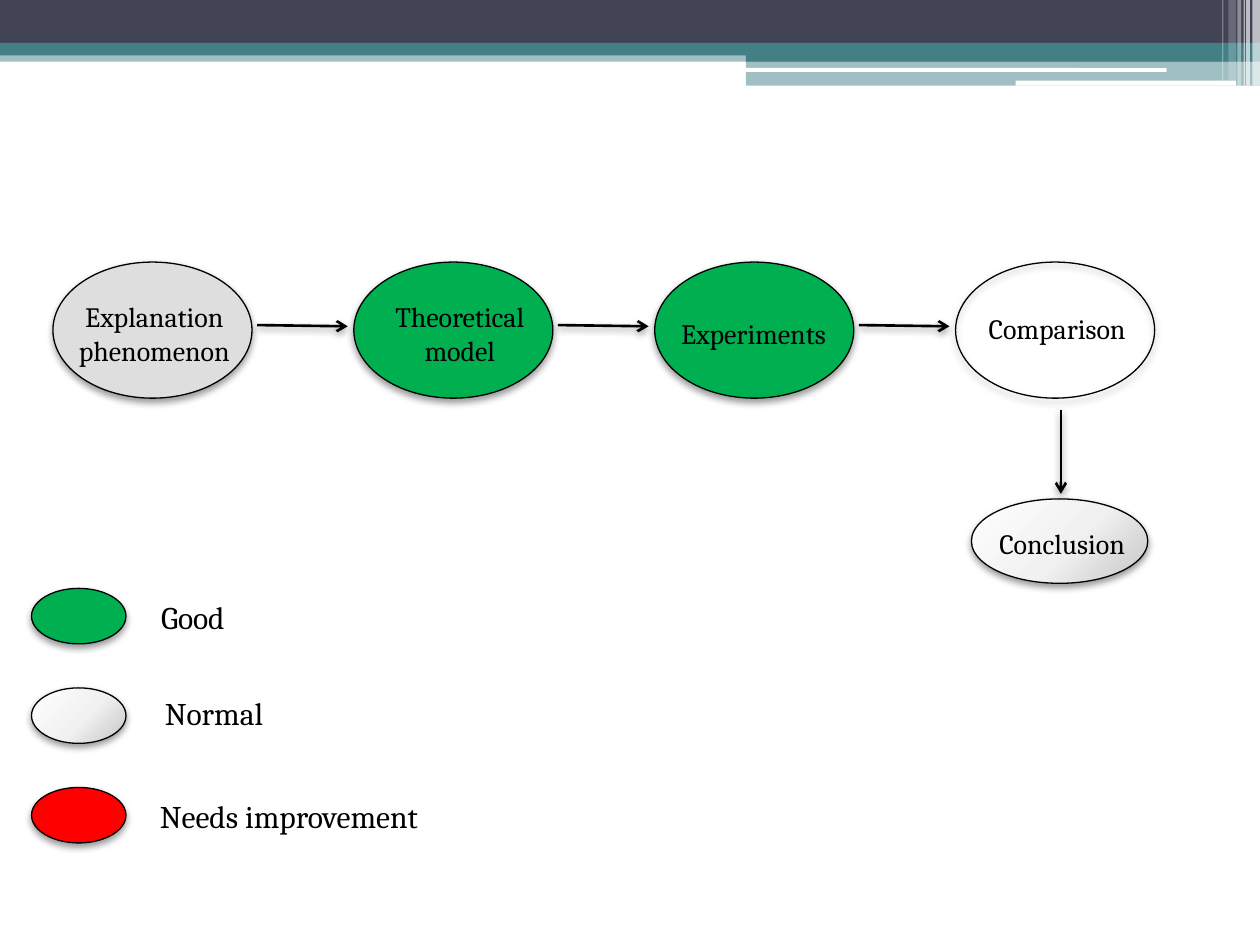
from typing import NamedTuple, Optional

from lxml import etree
from pptx import Presentation, util as u
from pptx.dml.color import RGBColor
from pptx.enum import shapes, text
from pptx.oxml import parse_xml
from pptx.oxml.ns import nsdecls, qn

COLS, ROWS = 100, 75
CELL = u.Inches(10) // COLS


class Theme(NamedTuple):
    font: str = "Cambria"
    node_size: int = 16
    legend_size: int = 18
    ink: str = "000000"
    paper: str = "FFFFFF"
    navy: str = "424456"
    teal: str = "438086"
    start: str = "DEDEDE"
    good: str = "00B050"
    poor: str = "FF0000"
    normal: tuple = ((0, "FEFEFE"), (55, "F1F1F1"), (100, "C5C5C5"))
    outline: float = 0.75
    arrow: float = 1.5


class Box(NamedTuple):
    """Left column, top row, columns wide and rows high."""
    col: float
    row: float
    cols: float
    rows: float


class Bar(NamedTuple):
    box: Box
    color: str
    opacity: int = 100
    rounded: bool = False


class Node(NamedTuple):
    label: str
    oval: Box
    label_box: Box
    fill: object
    size: int
    align: text.PP_ALIGN = text.PP_ALIGN.CENTER


T = Theme()


def grid(*cells: float) -> list:
    return [round(c * CELL) for c in cells]


def paint(s, color: str, opacity: int = 100) -> None:
    s.fill.solid()
    s.fill.fore_color.rgb = RGBColor.from_string(color)
    if opacity < 100:
        clr = s._element.spPr.find(f".//{qn('a:srgbClr')}")
        etree.SubElement(clr, qn("a:alpha"), val=str(opacity * 1000))


def paint_gradient(s, stops: tuple) -> None:
    """Fill with a circular gradient centred beyond the upper left."""
    gs = "".join(f'<a:gs pos="{pos * 1000}"><a:srgbClr val="{c}"/></a:gs>'
                 for pos, c in stops)
    s._element.spPr.append(parse_xml(
        f'<a:gradFill {nsdecls("a")} rotWithShape="1"><a:gsLst>{gs}</a:gsLst>'
        '<a:path path="circle"><a:fillToRect l="-40000" t="-90000" '
        'r="140000" b="190000"/></a:path></a:gradFill>'))


def add_shadow(s) -> None:
    spPr = s._element.spPr
    for old in spPr.findall(qn("a:effectLst")):
        spPr.remove(old)
    spPr.append(parse_xml(
        f'<a:effectLst {nsdecls("a")}><a:outerShdw blurRad="{u.Pt(4.1)}" '
        f'dist="{u.Pt(2)}" dir="5400000" rotWithShape="0"><a:srgbClr val="{T.ink}">'
        '<a:alpha val="40000"/></a:srgbClr></a:outerShdw></a:effectLst>'))


def set_line(s, width: float) -> None:
    s.line.color.rgb = RGBColor.from_string(T.ink)
    s.line.width = u.Pt(width)


def add_bar(slide, bar: Bar) -> None:
    kind = shapes.MSO_SHAPE.ROUNDED_RECTANGLE if bar.rounded else shapes.MSO_SHAPE.RECTANGLE
    s = slide.shapes.add_shape(kind, *grid(*bar.box))
    paint(s, bar.color, bar.opacity)
    s.line.fill.background()
    s.shadow.inherit = False


def add_oval(slide, box: Box, fill) -> None:
    s = slide.shapes.add_shape(shapes.MSO_SHAPE.OVAL, *grid(*box))
    if fill is None:
        s.fill.background()
    elif isinstance(fill, tuple):
        paint_gradient(s, fill)
    else:
        paint(s, fill)
    set_line(s, T.outline)
    add_shadow(s)


def add_label(slide, node: Node) -> None:
    tf = slide.shapes.add_textbox(*grid(*node.label_box)).text_frame
    for name, value in {"word_wrap": True,
                        "auto_size": text.MSO_AUTO_SIZE.SHAPE_TO_FIT_TEXT}.items():
        setattr(tf, name, value)
    p = tf.paragraphs[0]
    p.alignment = node.align
    r = p.add_run()
    r.text = node.label
    for name, value in {"name": T.font, "size": u.Pt(node.size)}.items():
        setattr(r.font, name, value)
    r.font.color.rgb = RGBColor.from_string(T.ink)


def add_node(slide, node: Node) -> None:
    add_oval(slide, node.oval, node.fill)
    add_label(slide, node)


def add_arrow(slide, x1: float, y1: float, x2: float, y2: float) -> None:
    s = slide.shapes.add_connector(shapes.MSO_CONNECTOR.STRAIGHT, *grid(x1, y1, x2, y2))
    set_line(s, T.arrow)
    etree.SubElement(s.line._get_or_add_ln(), qn("a:tailEnd"), type="arrow")
    add_shadow(s)


def stripe(col: float, cols: float, opacity: int, rows: float = 6.8) -> Bar:
    return Bar(Box(col, 0, cols, rows), T.paper, opacity)


HEADER = [
    Bar(Box(0, 4, COLS, 0.9), T.teal, 50),
    Bar(Box(0, 0, COLS, 3.4), T.navy),
    Bar(Box(0, 3.4, COLS, 1), T.teal),
    Bar(Box(59.2, 3.9, 40.8, 1), T.teal),
    Bar(Box(59.2, 4.8, 40.8, 2), T.teal, 50),
    Bar(Box(59.1, 5.4, 33.5, 0.3), T.paper, rounded=True),
    Bar(Box(80.6, 6.4, 17.5, 0.4), T.paper, rounded=True),
    stripe(99.4, 0.6, 65), stripe(98.9, 0.3, 65), stripe(98.7, 0.1, 60),
    stripe(98.2, 0.3, 40), stripe(97.5, 0.6, 20, 6.4), stripe(97, 0.1, 30, 6.4),
]

FLOW_LEFT, FLOW_TOP, FLOW_PITCH = 4.2, 20.8, 23.88
ARROW_OFFSET, ARROW_LENGTH, ARROW_ROW = 16.2, 7.2, 25.8
LEGEND_TOP, LEGEND_PITCH = 46.7, 7.9


def flow_node(step: int, label: str, label_box: Box, fill: Optional[str]) -> Node:
    oval = Box(FLOW_LEFT + step * FLOW_PITCH, FLOW_TOP, 15.8, 10.8)
    return Node(label, oval, label_box, fill, T.node_size)


def legend_node(step: int, label: str, label_box: Box, fill) -> Node:
    oval = Box(2.5, LEGEND_TOP + step * LEGEND_PITCH, 7.5, 4.4)
    return Node(label, oval, label_box, fill, T.legend_size, text.PP_ALIGN.LEFT)


NODES = [
    flow_node(0, "Explanation phenomenon", Box(4.5, 23.3, 15.5, 6.4), T.start),
    flow_node(1, "Theoretical model", Box(29.7, 23.3, 13.6, 6.4), T.good),
    flow_node(2, "Experiments", Box(51.9, 24.6, 15.8, 3.7), T.good),
    flow_node(3, "Comparison", Box(76.3, 24.2, 15.2, 3.7), None),
    Node("Conclusion", Box(77.1, 39.6, 14, 6.7), Box(77.1, 41.3, 14.4, 3.7),
         T.normal, T.node_size),
    legend_node(0, "Good", Box(11.8, 47, 10.7, 4), T.good),
    legend_node(1, "Normal", Box(12.1, 54.6, 20.4, 4), T.normal),
    legend_node(2, "Needs improvement", Box(11.7, 62.8, 37.5, 4), T.poor),
]


def main() -> None:
    prs = Presentation()
    prs.slide_width, prs.slide_height = grid(COLS, ROWS)
    slide = prs.slides.add_slide(prs.slide_layouts[6])
    for bar in HEADER:
        add_bar(slide, bar)
    for node in NODES:
        add_node(slide, node)
    for step in range(3):
        x = FLOW_LEFT + ARROW_OFFSET + step * FLOW_PITCH
        add_arrow(slide, x, ARROW_ROW, x + ARROW_LENGTH, ARROW_ROW + 0.1)
    add_arrow(slide, 84.2, 32.5, 84.2, 39.2)
    prs.save("out.pptx")


if __name__ == "__main__":
    main()
